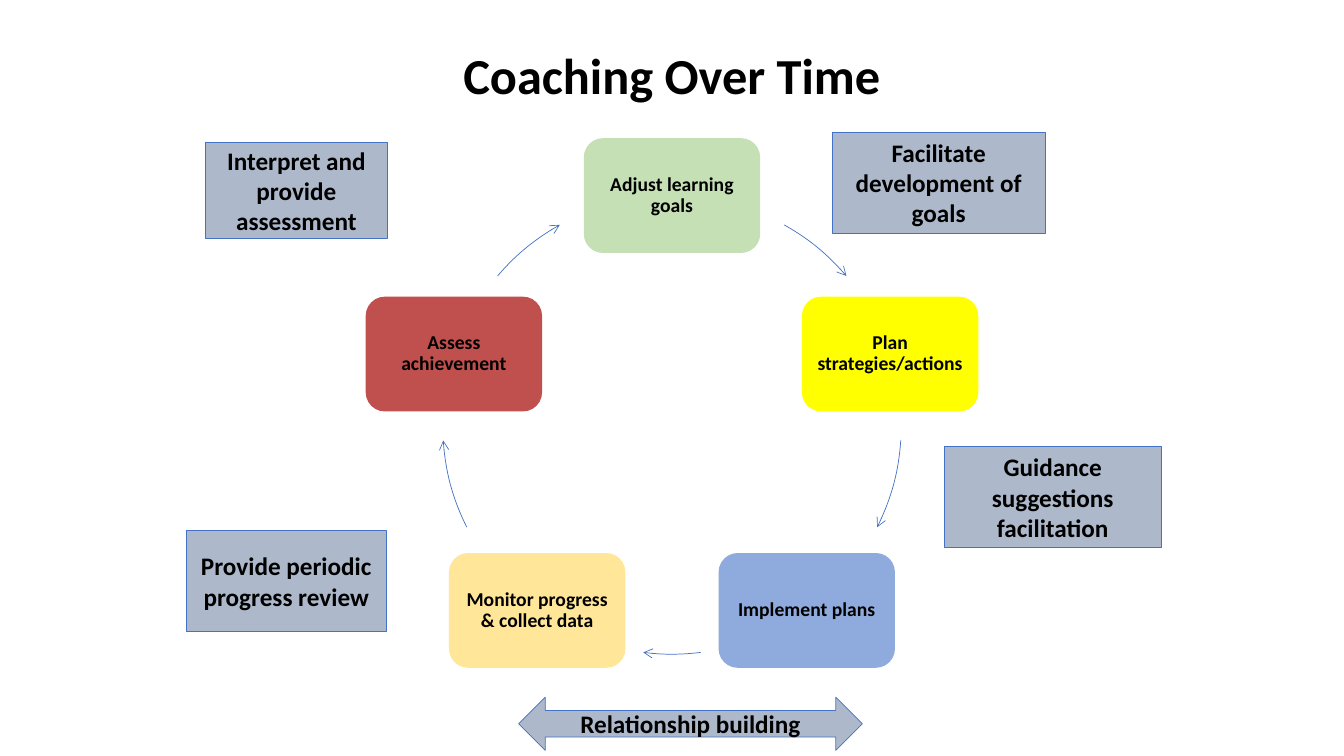
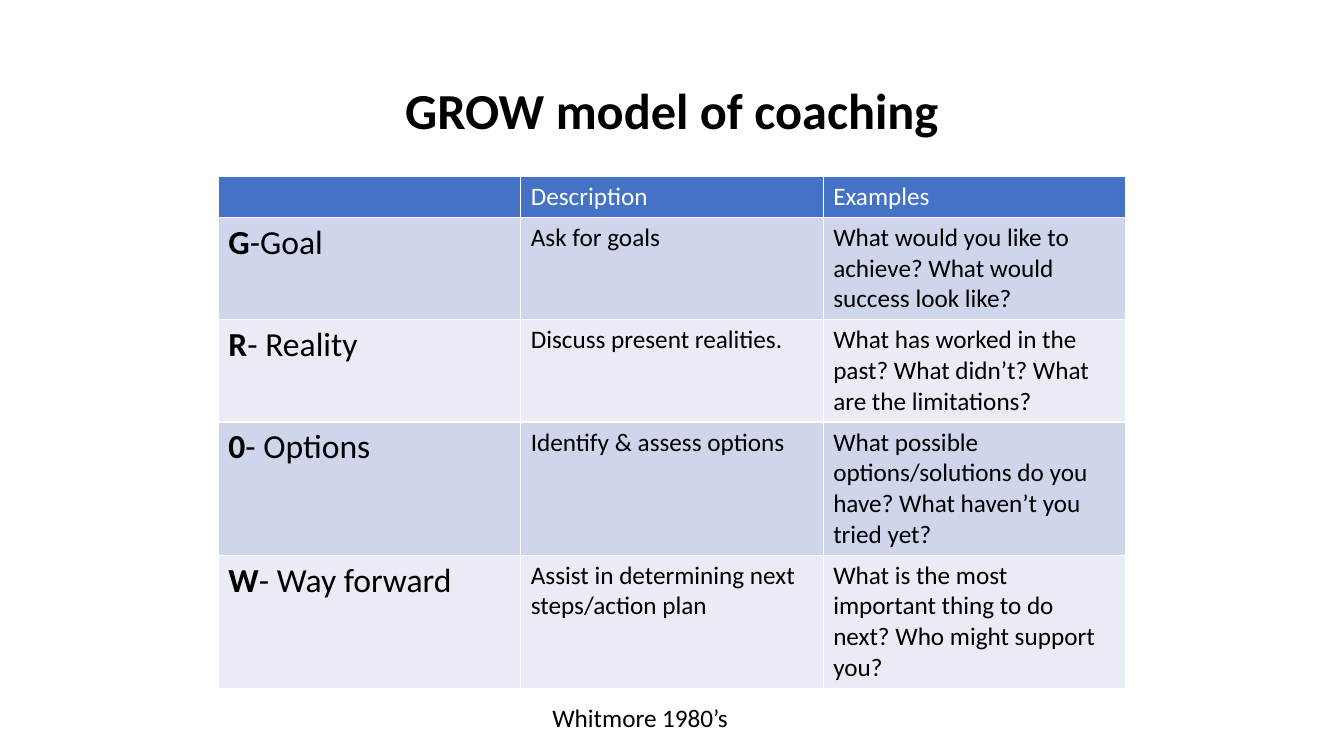
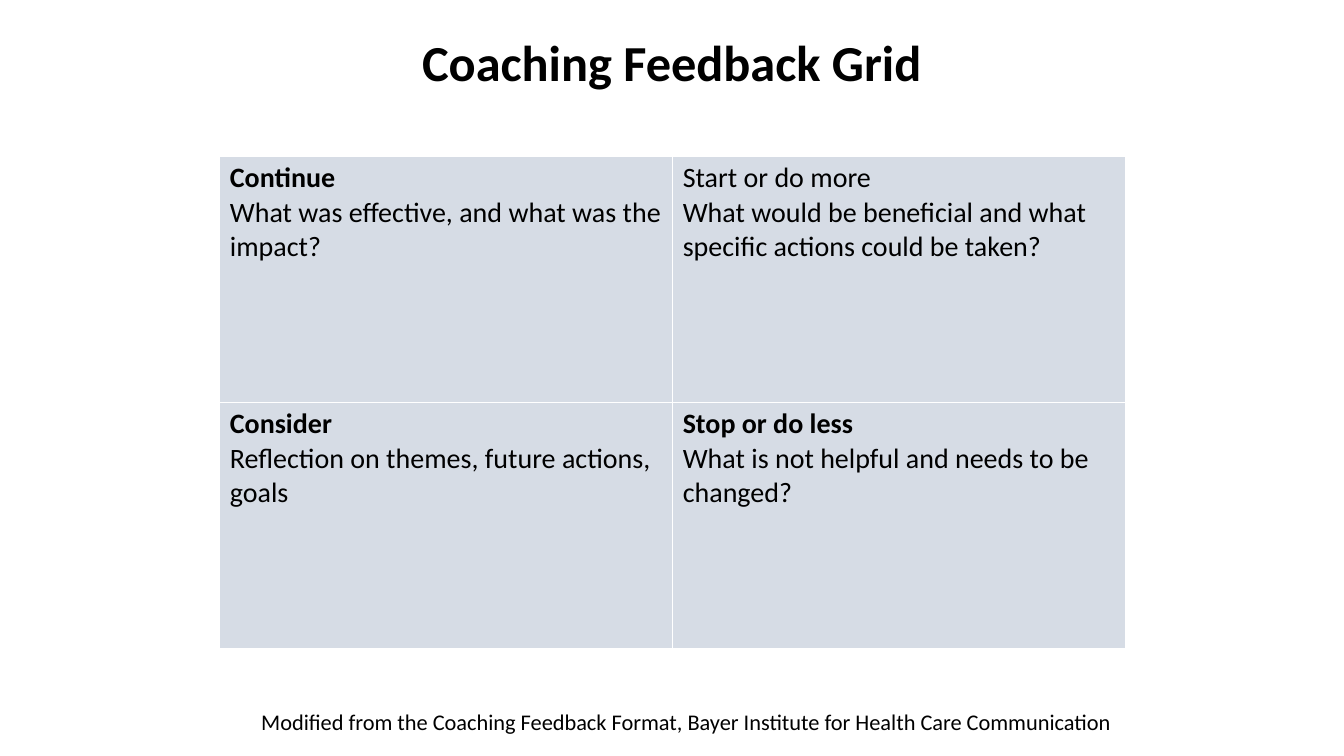
import math

import pptx
import pptx.dml.color
import pptx.enum.shapes
import pptx.enum.text
import pptx.oxml
import pptx.oxml.ns
import pptx.util

Pt = pptx.util.Pt
RGBColor = pptx.dml.color.RGBColor
SHAPE = pptx.enum.shapes.MSO_SHAPE
ANCHOR = pptx.enum.text.MSO_ANCHOR
ALIGN = pptx.enum.text.PP_ALIGN
AUTO_SIZE = pptx.enum.text.MSO_AUTO_SIZE

# Shared colours and font
BLACK = RGBColor(0x00, 0x00, 0x00)
WHITE = RGBColor(0xFF, 0xFF, 0xFF)
BLUE = RGBColor(0x44, 0x72, 0xC4)
GREY_BLUE = RGBColor(0xAD, 0xB9, 0xCA)
GREEN = RGBColor(0xC5, 0xE0, 0xB4)
YELLOW = RGBColor(0xFF, 0xFF, 0x00)
LIGHT_BLUE = RGBColor(0x8F, 0xAA, 0xDC)
CREAM = RGBColor(0xFF, 0xE6, 0x99)
RED = RGBColor(0xC0, 0x50, 0x4D)
BAND_DARK = RGBColor(0xCF, 0xD5, 0xEA)
BAND_LIGHT = RGBColor(0xE9, 0xEB, 0xF5)
GRID_FILL = RGBColor(0xD6, 0xDC, 0xE5)
FONT = "Calibri"


def write(paragraph, runs, size, color=BLACK, **layout):
    """Fill a paragraph with (text, bold) runs."""
    for name, value in layout.items():
        setattr(paragraph, name, value)
    for text, bold in runs:
        run = paragraph.add_run()
        run.text = text
        for name, value in {"name": FONT, "size": Pt(size), "bold": bold}.items():
            setattr(run.font, name, value)
        run.font.color.rgb = color


def add_box(slide, kind, box, fill, line, text, size, **layout):
    """Add a preset shape with centred bold text."""
    shape = slide.shapes.add_shape(kind, *map(Pt, box))
    shape.shadow.inherit = False
    shape.fill.solid()
    shape.fill.fore_color.rgb = fill
    if line is None:
        shape.line.fill.background()
    else:
        shape.line.color.rgb = line
        shape.line.width = Pt(0.5)
    shape.text_frame.word_wrap = True
    shape.text_frame.vertical_anchor = ANCHOR.MIDDLE
    write(shape.text_frame.paragraphs[0], [(text, True)], size,
          alignment=ALIGN.CENTER, **layout)
    return shape


presentation = pptx.Presentation()
presentation.slide_width = Pt(960)
presentation.slide_height = Pt(540)

# Slides and titles
titles = [
    ("Coaching Over Time", (156, 25, 648, 61)),
    ("GROW model of coaching", (66, 29, 828, 104)),
    ("Coaching Feedback Grid", (156, 21.5, 648, 50)),
]
slides = []
for text, box in titles:
    slide = presentation.slides.add_slide(presentation.slide_layouts[5])
    title = slide.shapes.title
    title.left, title.top, title.width, title.height = map(Pt, box)
    title.text_frame.auto_size = AUTO_SIZE.NONE
    title.text_frame.vertical_anchor = ANCHOR.MIDDLE
    write(title.text_frame.paragraphs[0], [(text, True)], 36,
          alignment=ALIGN.CENTER, line_spacing=0.9)
    slides.append(slide)
cycle_slide, grow_slide, grid_slide = slides

# Slide 1: cycle of steps, clockwise from the top, each with the arc that follows
CENTER_X, CENTER_Y, RADIUS = 480, 303.5, 163.8
STEP_WIDTH, STEP_HEIGHT = 126, 82
steps = [
    ("Adjust learning goals", GREEN, (29.3, 49.5)),
    ("Plan strategies/actions", YELLOW, (93.9, 116.5)),
    ("Implement plans", LIGHT_BLUE, (172.8, 187.2)),
    ("Monitor progress & collect data", CREAM, (243.5, 266.1)),
    ("Assess achievement", RED, (310.5, 330.7)),
]
for index, (text, fill, arc_angles) in enumerate(steps):
    angle = math.radians(index * 360 / len(steps))
    left = CENTER_X + RADIUS * math.sin(angle) - STEP_WIDTH / 2
    top = CENTER_Y - RADIUS * math.cos(angle) - STEP_HEIGHT / 2
    step = add_box(cycle_slide, SHAPE.ROUNDED_RECTANGLE,
                   (left, top, STEP_WIDTH, STEP_HEIGHT), fill, None, text, 14,
                   line_spacing=0.9)
    for side in ("left", "top", "right", "bottom"):
        setattr(step.text_frame, "margin_" + side, Pt(4.2))

    arc = cycle_slide.shapes.add_shape(
        SHAPE.ARC, Pt(CENTER_X - RADIUS), Pt(CENTER_Y - RADIUS),
        Pt(2 * RADIUS), Pt(2 * RADIUS))
    arc.shadow.inherit = False
    arc.fill.background()
    arc.line.color.rgb = BLUE
    arc.line.width = Pt(0.5)
    # Arc angles run clockwise from the right, in 60000ths of a degree
    for position, degrees in enumerate(arc_angles):
        arc.adjustments[position] = (degrees - 90) % 360 * 0.6
    arrowhead = pptx.oxml.parse_xml(
        "<a:tailEnd %s type='arrow'/>" % pptx.oxml.ns.nsdecls("a"))
    arc.line._get_or_add_ln().append(arrowhead)

# Slide 1: coach's tasks around the cycle
tasks = [
    ("Guidance suggestions facilitation", SHAPE.RECTANGLE, (674.5, 319, 155, 72)),
    ("Interpret and provide assessment", SHAPE.RECTANGLE, (147, 101.5, 129.5, 69)),
    ("Facilitate development of goals", SHAPE.RECTANGLE, (594.5, 94.5, 152, 72)),
    ("Provide periodic progress review", SHAPE.RECTANGLE, (133, 379, 143, 72)),
    ("Relationship building", SHAPE.LEFT_RIGHT_ARROW, (370.5, 498, 245.5, 38)),
]
for text, kind, box in tasks:
    add_box(cycle_slide, kind, box, GREY_BLUE, BLUE, text, 18)

# Slide 2: GROW table
grow_rows = [
    ("G", "-Goal", "Ask for goals",
     "What would you like to achieve? What would success look like?"),
    ("R", "- Reality", "Discuss present realities.",
     "What has worked in the past? What didn’t? What are the limitations?"),
    ("0", "- Options", "Identify & assess options",
     "What possible options/solutions do you have? What haven’t you tried yet?"),
    ("W", "- Way forward", "Assist in determining next steps/action plan",
     "What is the most important thing to do next? Who might support you?"),
]
row_heights = [29.2, 73, 73, 95, 95]
grow_table = grow_slide.shapes.add_table(
    len(row_heights), 3, Pt(156), Pt(126), Pt(648), Pt(sum(row_heights))).table
for row, height in zip(grow_table.rows, row_heights):
    row.height = Pt(height)
for column, text in enumerate(["", "Description", "Examples"]):
    cell = grow_table.cell(0, column)
    cell.fill.solid()
    cell.fill.fore_color.rgb = BLUE
    if text:
        write(cell.text_frame.paragraphs[0], [(text, False)], 18, WHITE)
for row, (letter, rest, description, example) in enumerate(grow_rows, start=1):
    contents = [
        ([(letter, True), (rest, False)], 24),
        ([(description, False)], 18),
        ([(example, False)], 18),
    ]
    for column, (runs, size) in enumerate(contents):
        cell = grow_table.cell(row, column)
        cell.fill.solid()
        cell.fill.fore_color.rgb = BAND_DARK if row % 2 else BAND_LIGHT
        write(cell.text_frame.paragraphs[0], runs, size)

# Slide 3: feedback grid
feedback = [
    ("Continue", True, "What was effective, and what was the impact?"),
    ("Start or do more", False,
     "What would be beneficial and what specific actions could be taken?"),
    ("Consider", True, "Reflection on themes, future actions, goals"),
    ("Stop or do less", True, "What is not helpful and needs to be changed?"),
]
grid_table = grid_slide.shapes.add_table(
    2, 2, Pt(157), Pt(111.5), Pt(647), Pt(351.5)).table
for index, (heading, bold, question) in enumerate(feedback):
    cell = grid_table.cell(index // 2, index % 2)
    cell.fill.solid()
    cell.fill.fore_color.rgb = GRID_FILL
    write(cell.text_frame.paragraphs[0], [(heading, bold)], 20)
    write(cell.text_frame.add_paragraph(), [(question, False)], 20)

# Source lines below the tables
sources = [
    (grow_slide, "Whitmore 1980’s", 18, (387.5, 498, 141, 29)),
    (grid_slide, "Modified from the Coaching Feedback Format, "
     "Bayer Institute for Health Care Communication", 16, (179.5, 502.5, 652, 26.5)),
]
for slide, text, size, box in sources:
    source = slide.shapes.add_textbox(*map(Pt, box))
    source.text_frame.word_wrap = False
    source.text_frame.auto_size = AUTO_SIZE.SHAPE_TO_FIT_TEXT
    write(source.text_frame.paragraphs[0], [(text, False)], size)

presentation.save("out.pptx")
